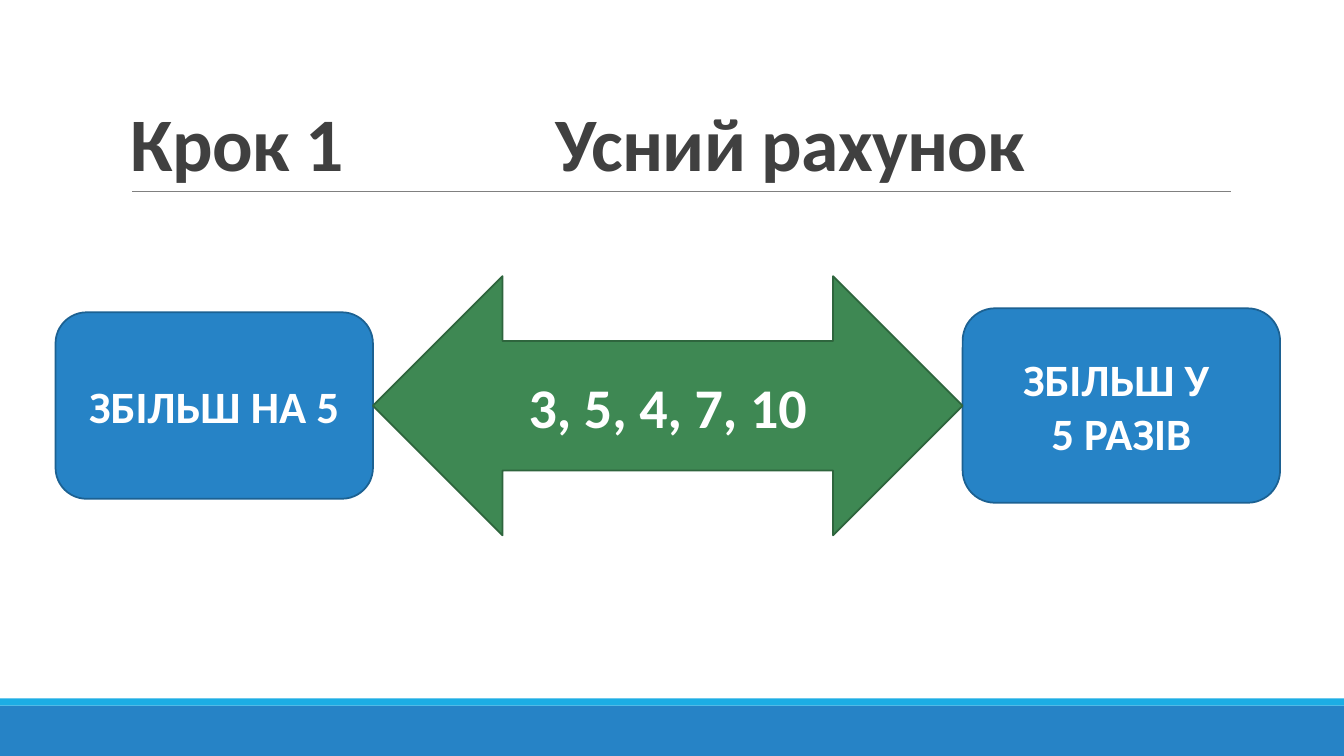
"""Mental arithmetic slide: two operations joined by a double arrow of numbers."""
from lxml import etree
from pptx import Presentation
from pptx.dml.color import RGBColor
from pptx.enum.shapes import MSO_CONNECTOR, MSO_SHAPE
from pptx.enum.text import MSO_ANCHOR, PP_ALIGN
from pptx.oxml.ns import qn
from pptx.util import Cm, Pt

RECT, ROUNDED = MSO_SHAPE.RECTANGLE, MSO_SHAPE.ROUNDED_RECTANGLE
ARROW = MSO_SHAPE.LEFT_RIGHT_ARROW
MIDDLE, BOTTOM = MSO_ANCHOR.MIDDLE, MSO_ANCHOR.BOTTOM
LEFT, CENTER = PP_ALIGN.LEFT, PP_ALIGN.CENTER
COLORS = {
    "blue": "2683C6", "blue_edge": "1C6192", "cyan": "1CADE4",
    "green": "3E8853", "green_edge": "2E653D",
    "title": "404040", "rule": "808080", "white": "FFFFFF",
}


def rgb(name):
    return RGBColor.from_string(COLORS[name])


def write(tf, text, size=32, color="white", align=CENTER, anchor=MIDDLE):
    tf.word_wrap = True
    tf.vertical_anchor = anchor
    for i, line in enumerate(text.split("\n")):
        p = tf.add_paragraph() if i else tf.paragraphs[0]
        p.alignment = align
        r = p.add_run()
        r.text = line
        r.font.name = "Calibri"
        r.font.size = Pt(size)
        r.font.bold = True
        r.font.color.rgb = rgb(color)


prs = Presentation()
prs.slide_width, prs.slide_height = Cm(33.87), Cm(19.05)
s = prs.slides.add_slide(prs.slide_layouts[6])

for top, height, fill in [(17.78, 1.27, "blue"), (17.6, 0.18, "cyan")]:
    band = s.shapes.add_shape(RECT, 0, Cm(top), prs.slide_width, Cm(height))
    band.shadow.inherit = False
    band.fill.solid()
    band.fill.fore_color.rgb = rgb(fill)
    band.line.fill.background()

rule = s.shapes.add_connector(MSO_CONNECTOR.STRAIGHT, Cm(3.33), Cm(4.82), Cm(31.01), Cm(4.82))
rule.line.color.rgb = rgb("rule")
rule.line.width = Pt(0.5)
etree.SubElement(rule._element.spPr, qn("a:effectLst"))

title = s.shapes.add_textbox(Cm(3.05), Cm(0.79), Cm(27.94), Cm(4.04))
tf = title.text_frame
write(tf, "Крок 1\tУсний рахунок", size=54, color="title", align=LEFT, anchor=BOTTOM)
p = tf.paragraphs[0]
p.line_spacing = 0.85
p.runs[0].font._element.set("spc", "-50")
tabs = etree.SubElement(p._p.get_or_add_pPr(), qn("a:tabLst"))
etree.SubElement(tabs, qn("a:tab"), pos=str(Cm(10.69)), algn="l")

for kind, left, top, width, height, fill, text, size in [
    (ROUNDED, 1.4, 7.87, 8, 4.7, "blue", "ЗБІЛЬШ НА 5", 32),
    (ROUNDED, 24.26, 7.77, 8, 4.9, "blue", "ЗБІЛЬШ У \n5 РАЗІВ", 32),
    (ARROW, 9.4, 6.96, 14.86, 6.53, "green", "3, 5, 4, 7, 10", 40),
]:
    sp = s.shapes.add_shape(kind, Cm(left), Cm(top), Cm(width), Cm(height))
    sp.shadow.inherit = False
    sp.fill.solid()
    sp.fill.fore_color.rgb = rgb(fill)
    sp.line.color.rgb = rgb(fill + "_edge")
    sp.line.width = Pt(1.25)
    write(sp.text_frame, text, size=size)

prs.save("out.pptx")
